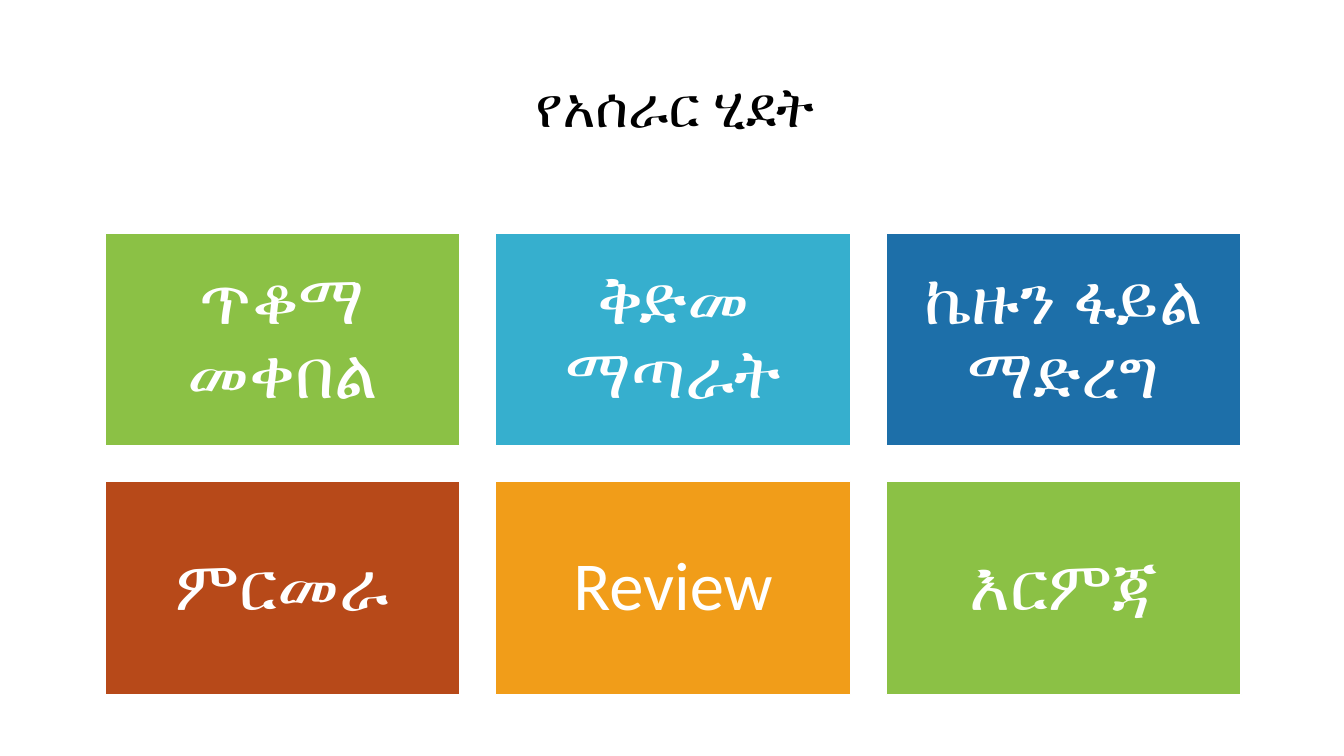
from pptx import Presentation
from pptx.dml.color import RGBColor
from pptx.enum.shapes import MSO_SHAPE
from pptx.enum.text import MSO_ANCHOR, PP_ALIGN
from pptx.util import Pt

RECTANGLE = MSO_SHAPE.RECTANGLE
MIDDLE = MSO_ANCHOR.MIDDLE
CENTER = PP_ALIGN.CENTER
FONT = "Calibri"


def color(hex_code):
    return RGBColor.from_string(hex_code)


def write(box, text, size, hex_code):
    frame = box.text_frame
    frame.word_wrap = True
    frame.vertical_anchor = MIDDLE
    para = frame.paragraphs[0]
    para.alignment = CENTER
    para.line_spacing = 0.9
    span = para.add_run()
    span.text = text
    span.font.name = FONT
    span.font.size = Pt(size)
    span.font.color.rgb = color(hex_code)


deck = Presentation()
deck.slide_width, deck.slide_height = Pt(960), Pt(540)
page = deck.slides.add_slide(deck.slide_layouts[5])

# Title
title = page.shapes.title
title.left, title.top, title.width, title.height = Pt(66), Pt(27.5), Pt(832), Pt(101.5)
write(title, "የአሰራር ሂደት", 40, "000000")

# Process steps in a grid of three columns
STEPS = [
    ("ጥቆማ መቀበል", "8BC145"),
    ("ቅድመ ማጣራት", "36AFCE"),
    ("ኬዙን ፋይል ማድረግ", "1D6FA9"),
    ("ምርመራ", "B74919"),
    ("Review", "F19D19"),
    ("እርምጃ", "8BC145"),
]
COLUMNS = 3
LEFT, TOP = 75, 166.5
WIDTH, HEIGHT = 253.5, 152
GAP = 25.5
INSET = Pt(14.4)

for index, (step, fill) in enumerate(STEPS):
    row, column = divmod(index, COLUMNS)
    tile = page.shapes.add_shape(
        RECTANGLE,
        Pt(LEFT + column * (WIDTH + GAP)),
        Pt(TOP + row * (HEIGHT + GAP)),
        Pt(WIDTH),
        Pt(HEIGHT),
    )
    tile.shadow.inherit = False
    tile.fill.solid()
    tile.fill.fore_color.rgb = color(fill)
    tile.line.color.rgb = color("FFFFFF")
    tile.line.width = Pt(1)
    frame = tile.text_frame
    frame.margin_left = frame.margin_right = INSET
    frame.margin_top = frame.margin_bottom = INSET
    write(tile, step, 49, "FFFFFF")

deck.save("out.pptx")
